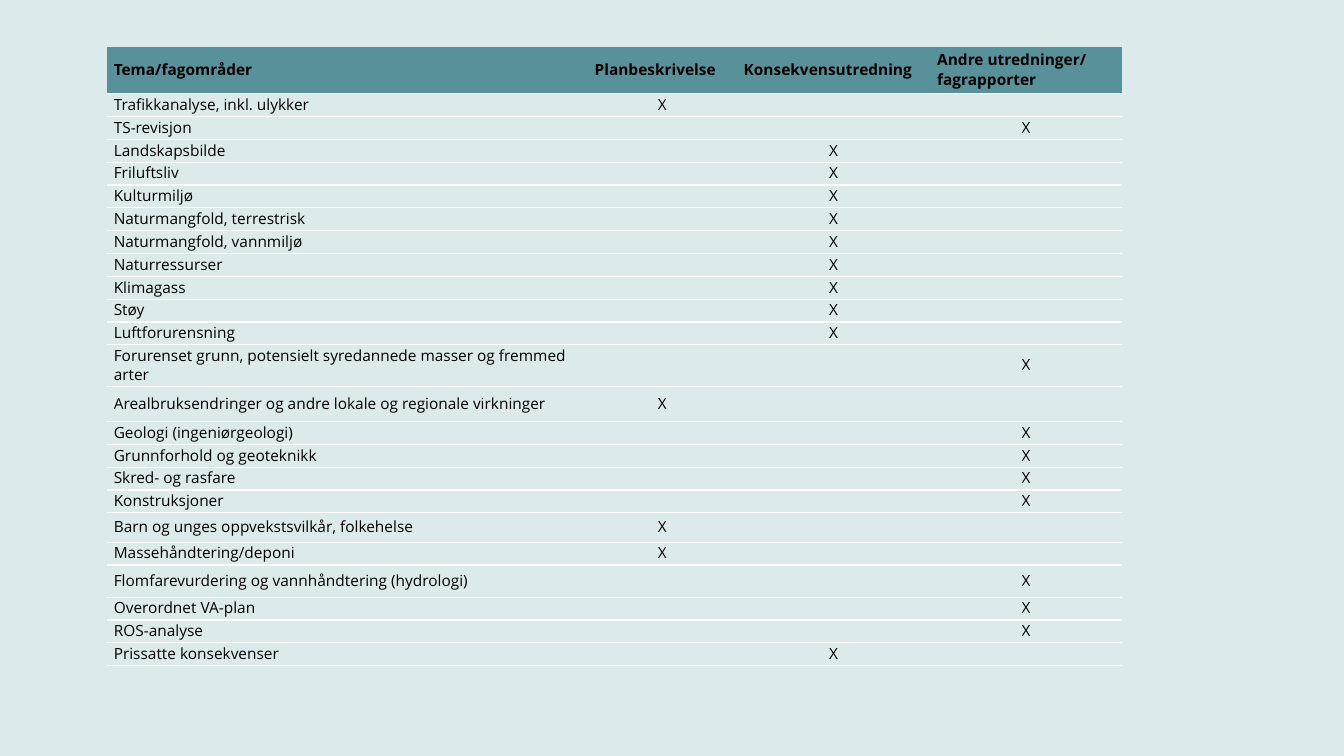
from dataclasses import dataclass
from typing import Optional

from lxml.etree import SubElement
from pptx import Presentation
from pptx.dml.color import RGBColor
from pptx.enum.text import MSO_ANCHOR, PP_ALIGN
from pptx.oxml.ns import qn
from pptx.table import Table, _Cell
from pptx.util import Pt


@dataclass(frozen=True)
class Theme:
    background: str = "DDEAEB"
    header: str = "589199"
    ink: str = "000000"
    rule: str = "FFFFFF"
    font: str = "Open Sans"
    size: float = 11
    leading: float = 14
    rule_width: float = 1
    side_inset: float = 4.9
    table_style: str = "{2D5ABB26-0587-4C30-8999-92F81FD0307C}"


@dataclass(frozen=True)
class Topic:
    name: str
    covered_in: int
    height: float = 16.3


THEME = Theme()
PLAN, IMPACT, OTHER = 1, 2, 3
HEADINGS = (
    "Tema/fagområder",
    "Planbeskrivelse",
    "Konsekvensutredning",
    "Andre utredninger/ fagrapporter",
)
COLUMN_WIDTHS = (343.5, 106.5, 138.2, 136.8)
TABLE_LEFT, TABLE_TOP = 76.4, 33.4
HEADER_HEIGHT = 33.6
TOPICS = (
    Topic("Trafikkanalyse, inkl. ulykker", PLAN),
    Topic("TS-revisjon", OTHER),
    Topic("Landskapsbilde", IMPACT),
    Topic("Friluftsliv", IMPACT),
    Topic("Kulturmiljø", IMPACT),
    Topic("Naturmangfold, terrestrisk", IMPACT),
    Topic("Naturmangfold, vannmiljø", IMPACT),
    Topic("Naturressurser", IMPACT),
    Topic("Klimagass", IMPACT),
    Topic("Støy", IMPACT),
    Topic("Luftforurensning", IMPACT),
    Topic("Forurenset grunn, potensielt syredannede masser og fremmed arter", OTHER, 29.8),
    Topic("Arealbruksendringer og andre lokale og regionale virkninger", PLAN, 25.1),
    Topic("Geologi (ingeniørgeologi)", OTHER),
    Topic("Grunnforhold og geoteknikk", OTHER),
    Topic("Skred- og rasfare", OTHER),
    Topic("Konstruksjoner", OTHER),
    Topic("Barn og unges oppvekstsvilkår, folkehelse", PLAN, 20.9),
    Topic("Massehåndtering/deponi", PLAN),
    Topic("Flomfarevurdering og vannhåndtering (hydrologi)", OTHER, 23.1),
    Topic("Overordnet VA-plan", OTHER),
    Topic("ROS-analyse", OTHER),
    Topic("Prissatte konsekvenser", IMPACT),
)


def draw_rule(cell: _Cell, side: str) -> None:
    line = SubElement(cell._tc.get_or_add_tcPr(), qn(f"a:{side}"), w=str(Pt(THEME.rule_width)))
    SubElement(SubElement(line, qn("a:solidFill")), qn("a:srgbClr"), val=THEME.rule)


def write_cell(
    cell: _Cell,
    text: str,
    *,
    bold: bool = False,
    align: PP_ALIGN = PP_ALIGN.LEFT,
    fill: Optional[str] = None,
    rules: tuple[str, ...] = ("lnT", "lnB"),
) -> None:
    cell.margin_left = cell.margin_right = Pt(THEME.side_inset)
    cell.margin_top = cell.margin_bottom = Pt(0)
    cell.vertical_anchor = MSO_ANCHOR.MIDDLE
    for side in rules:
        draw_rule(cell, side)
    if fill:
        cell.fill.solid()
        cell.fill.fore_color.rgb = RGBColor.from_string(fill)
    else:
        cell.fill.background()
    paragraph = cell.text_frame.paragraphs[0]
    paragraph.alignment = align
    paragraph.line_spacing = Pt(THEME.leading)
    if not text:
        SubElement(paragraph._p, qn("a:endParaRPr"), sz=str(int(THEME.size * 100)))
        return
    run = paragraph.add_run()
    run.text = text
    run.font.name = THEME.font
    run.font.size = Pt(THEME.size)
    run.font.bold = bold
    run.font.color.rgb = RGBColor.from_string(THEME.ink)


def write_header(table: Table) -> None:
    table.rows[0].height = Pt(HEADER_HEIGHT)
    for column, heading in enumerate(HEADINGS):
        write_cell(table.cell(0, column), heading, bold=True, fill=THEME.header, rules=("lnB",))


def write_topic(table: Table, row: int, topic: Topic) -> None:
    table.rows[row].height = Pt(topic.height)
    write_cell(table.cell(row, 0), topic.name)
    for column in (PLAN, IMPACT, OTHER):
        mark = "X" if column == topic.covered_in else ""
        write_cell(table.cell(row, column), mark, align=PP_ALIGN.CENTER)


def main() -> None:
    presentation = Presentation()
    presentation.slide_width, presentation.slide_height = Pt(960), Pt(540)
    slide = presentation.slides.add_slide(presentation.slide_layouts[6])
    slide.background.fill.solid()
    slide.background.fill.fore_color.rgb = RGBColor.from_string(THEME.background)

    table_height = HEADER_HEIGHT + sum(topic.height for topic in TOPICS)
    table = slide.shapes.add_table(
        len(TOPICS) + 1, len(HEADINGS),
        Pt(TABLE_LEFT), Pt(TABLE_TOP), Pt(sum(COLUMN_WIDTHS)), Pt(table_height),
    ).table
    table.horz_banding = False
    table._tbl.tblPr.find(qn("a:tableStyleId")).text = THEME.table_style
    for column, width in zip(table.columns, COLUMN_WIDTHS):
        column.width = Pt(width)

    write_header(table)
    for row, topic in enumerate(TOPICS, start=1):
        write_topic(table, row, topic)
    presentation.save("out.pptx")


if __name__ == "__main__":
    main()
